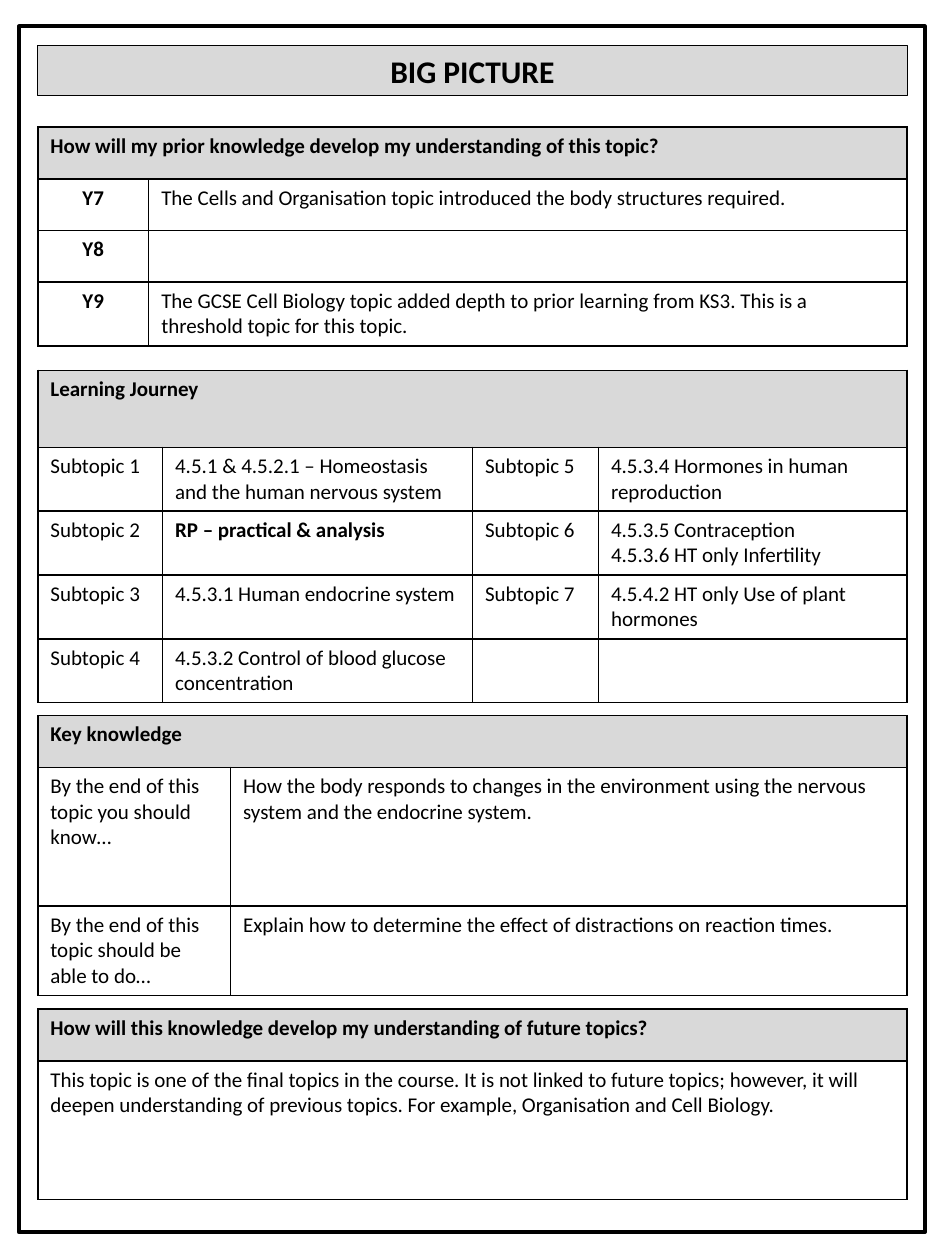
from lxml import etree
from pptx import Presentation, util as u
from pptx.dml.color import RGBColor
from pptx.enum import shapes, text
from pptx.oxml.ns import qn

COLOURS = {"ink": "000000", "band": "D9D9D9", "paper": "FFFFFF"}
FONT = "Calibri"
LEFT, WIDTH = 0.3, 6.9
BAND_ROW, TWO_LINE_ROW = 0.41, 0.5

TITLE = "BIG PICTURE"
BOLD = {"Y7", "Y8", "Y9", "RP – practical & analysis"}
CENTRED = {"Y7", "Y8", "Y9"}

SECTIONS = [
    {
        "heading": "How will my prior knowledge develop my understanding of this topic?",
        "top": 1.01,
        "columns": [0.88, 6.02],
        "heights": [BAND_ROW] * 3 + [TWO_LINE_ROW],
        "fill": "paper",
        "rows": [
            ["Y7", "The Cells and Organisation topic introduced the body structures required."],
            ["Y8", ""],
            ["Y9", "The GCSE Cell Biology topic added depth to prior learning from KS3. "
                   "This is a threshold topic for this topic."],
        ],
    },
    {
        "heading": "Learning Journey",
        "top": 2.94,
        "columns": [0.99, 2.46, 1, 2.45],
        "heights": [0.61] + [TWO_LINE_ROW] * 4,
        "rows": [
            ["Subtopic 1", "4.5.1 & 4.5.2.1 – Homeostasis and the human nervous system",
             "Subtopic 5", "4.5.3.4 Hormones in human reproduction"],
            ["Subtopic 2", "RP – practical & analysis",
             "Subtopic 6", "4.5.3.5 Contraception\n4.5.3.6 HT only Infertility"],
            ["Subtopic 3", "4.5.3.1 Human endocrine system",
             "Subtopic 7", "4.5.4.2 HT only Use of plant hormones"],
            ["Subtopic 4", "4.5.3.2 Control of blood glucose concentration", "", ""],
        ],
    },
    {
        "heading": "Key knowledge",
        "top": 5.68,
        "columns": [1.53, 5.37],
        "heights": [BAND_ROW, 1.1, 0.7],
        "rows": [
            ["By the end of this topic you should know…",
             "How the body responds to changes in the environment using the nervous "
             "system and the endocrine system."],
            ["By the end of this topic should be able to do…",
             "Explain how to determine the effect of distractions on reaction times."],
        ],
    },
    {
        "heading": "How will this knowledge develop my understanding of future topics?",
        "top": 8.01,
        "columns": [WIDTH],
        "heights": [BAND_ROW, 1.1],
        "rows": [
            ["This topic is one of the final topics in the course. It is not linked to "
             "future topics; however, it will deepen understanding of previous topics. "
             "For example, Organisation and Cell Biology."],
        ],
    },
]


def colour(name):
    return RGBColor.from_string(COLOURS[name])


def style_text(paragraph, size, bold, centred):
    font = paragraph.font
    font.name, font.size, font.bold = FONT, u.Pt(size), bold
    font.color.rgb = colour("ink")
    paragraph.alignment = text.PP_ALIGN.CENTER if centred else text.PP_ALIGN.LEFT


def outline(shape, points):
    shape.line.color.rgb = colour("ink")
    shape.line.width = u.Pt(points)


def paint_cell(cell, fill):
    """Add the borders, then the fill, which must follow them in the XML."""
    properties = cell._tc.get_or_add_tcPr()
    for side in ("a:lnL", "a:lnR", "a:lnT", "a:lnB"):
        border = etree.SubElement(properties, qn(side), w=str(u.Pt(1)))
        solid = etree.SubElement(border, qn("a:solidFill"))
        etree.SubElement(solid, qn("a:srgbClr"), val=COLOURS["ink"])
    if fill:
        cell.fill.solid()
        cell.fill.fore_color.rgb = colour(fill)
    else:
        cell.fill.background()


def add_section(slide, section):
    columns, heights = section["columns"], section["heights"]
    table = slide.shapes.add_table(
        len(heights), len(columns), u.Inches(LEFT), u.Inches(section["top"]),
        u.Inches(WIDTH), u.Inches(sum(heights))).table
    table.first_row = table.horz_banding = False
    for column, width in zip(table.columns, columns):
        column.width = u.Inches(width)
    for row, height in zip(table.rows, heights):
        row.height = u.Inches(height)

    heading_row = [section["heading"]] + [""] * (len(columns) - 1)
    for r, entries in enumerate([heading_row] + section["rows"]):
        for c, entry in enumerate(entries):
            cell = table.cell(r, c)
            cell.text = entry
            for paragraph in cell.text_frame.paragraphs:
                style_text(paragraph, 12, r == 0 or entry in BOLD, entry in CENTRED)
            paint_cell(cell, section.get("fill") if r else "band")
    if len(columns) > 1:
        table.cell(0, 0).merge(table.cell(0, len(columns) - 1))


def add_title(slide):
    title = slide.shapes.title
    title.left, title.top = u.Inches(LEFT), u.Inches(0.36)
    title.width, title.height = u.Inches(WIDTH), u.Inches(0.4)
    title.fill.solid()
    title.fill.fore_color.rgb = colour("band")
    outline(title, 0.75)
    frame = title.text_frame
    frame.text = TITLE
    frame.auto_size = text.MSO_AUTO_SIZE.NONE
    frame.vertical_anchor = text.MSO_ANCHOR.MIDDLE
    style_text(frame.paragraphs[0], 18, True, True)


def main():
    deck = Presentation()
    deck.slide_width, deck.slide_height = u.Inches(7.5), u.Inches(10)
    slide = deck.slides.add_slide(deck.slide_layouts[5])

    page_border = slide.shapes.add_shape(
        shapes.MSO_SHAPE.RECTANGLE,
        u.Inches(0.15), u.Inches(0.21), u.Inches(7.19), u.Inches(9.57))
    page_border.shadow.inherit = False
    page_border.fill.background()
    outline(page_border, 2.25)

    add_title(slide)
    for section in SECTIONS:
        add_section(slide, section)
    deck.save("out.pptx")


if __name__ == "__main__":
    main()
